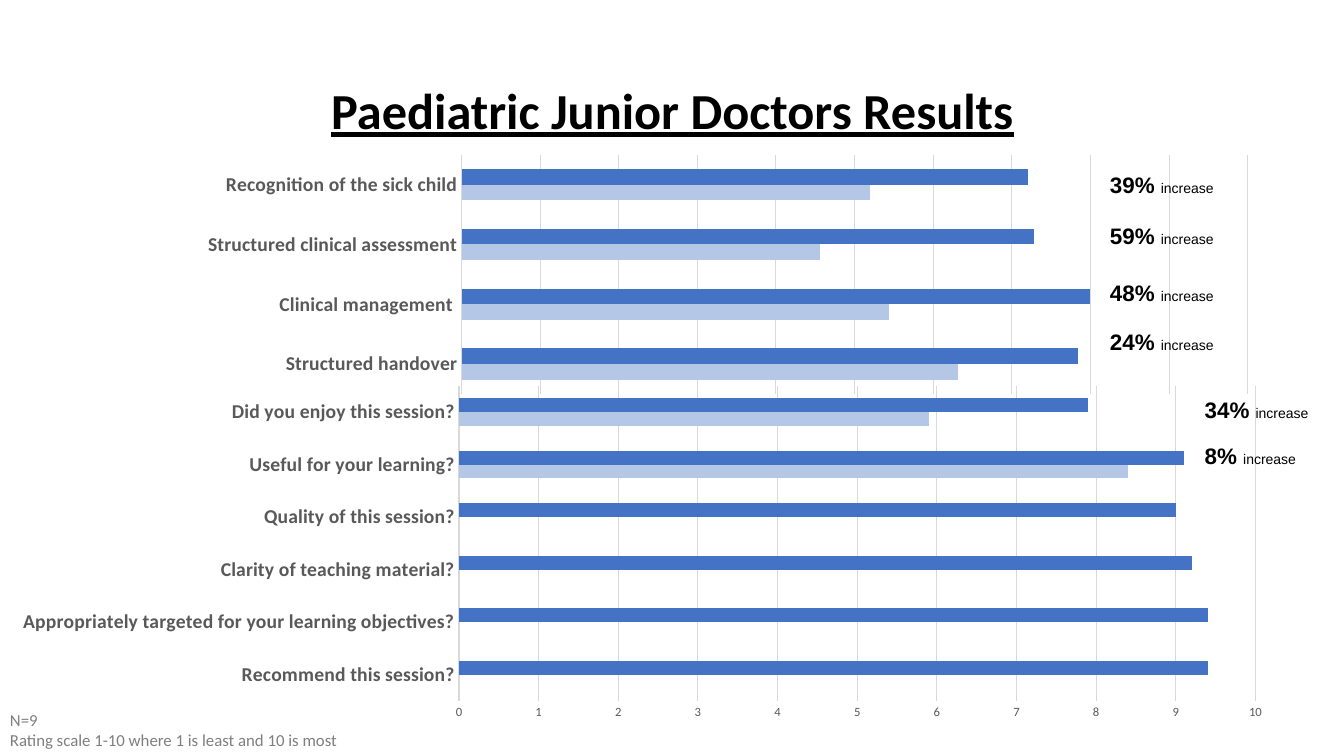
from dataclasses import dataclass

from lxml import etree
from pptx import Presentation
from pptx import util as u
from pptx.chart import data
from pptx.dml import color
from pptx.enum import chart as charts, text

BLACK, DARK_GRAY, GRAY, GRID = "000000", "595959", "7F7F7F", "D9D9D9"
BEFORE, AFTER = "B4C7E7", "4472C4"
CHART_NS = "http://schemas.openxmlformats.org/drawingml/2006/chart"


@dataclass
class Ratings:
    at: tuple[float, float, float, float]
    plot: tuple[float, float, float, float]
    maximum: float
    show_scale: bool
    rows: list[tuple[str, float | None, float]]


@dataclass
class Increase:
    left: float
    top: float
    percent: str


RATINGS = [
    Ratings((1.85, 1.48, 10.74, 2.47), (0.254, 0.023, 0.726, 0.96), 125, False, [
        ("Structured handover", 79, 98),
        ("Clinical management ", 68, 100),
        ("Structured clinical assessment", 57, 91),
        ("Recognition of the sick child", 65, 90),
    ]),
    Ratings((0.13, 3.62, 12.6, 3.6), (0.351, 0.058, 0.627, 0.868), 10, True, [
        ("Recommend this session?", None, 9.4),
        ("Appropriately targeted for your learning objectives?", None, 9.4),
        ("Clarity of teaching material?", None, 9.2),
        ("Quality of this session?", None, 9),
        ("Useful for your learning?", 8.4, 9.1),
        ("Did you enjoy this session?", 5.9, 7.9),
    ]),
]

INCREASES = [
    Increase(10.91, 1.65, "39%"),
    Increase(10.91, 2.15, "59%"),
    Increase(10.91, 2.72, "48%"),
    Increase(10.91, 3.21, "24%"),
    Increase(11.85, 3.88, "34%"),
    Increase(11.85, 4.34, "8%"),
]


def rgb(value: str) -> color.RGBColor:
    return color.RGBColor.from_string(value)


def style_font(font, size: float, hue: str, name: str = "Calibri",
               bold: bool = False, underline: bool = False) -> None:
    font.size = u.Pt(size)
    font.name = name
    font.bold = bold
    font.underline = underline
    font.color.rgb = rgb(hue)


def add_span(para, words: str, **style) -> None:
    span = para.add_run()
    span.text = words
    style_font(span.font, **style)


def add_box(page, left: float, top: float, width: float, height: float):
    """Add an empty wrapping text box and return its text frame."""
    box = page.shapes.add_textbox(*map(u.Inches, (left, top, width, height)))
    box.text_frame.word_wrap = True
    return box.text_frame


def style_line(line, hue: str) -> None:
    line.color.rgb = rgb(hue)
    line.width = u.Pt(0.75)


def set_plot_layout(chart, plot: tuple[float, float, float, float]) -> None:
    """Fix the inner plot area as fractions of the chart."""
    area = chart.plots[0]._element.getparent()
    for old in area.findall(f"{{{CHART_NS}}}layout"):
        area.remove(old)
    layout = etree.Element(f"{{{CHART_NS}}}layout")
    manual = etree.SubElement(layout, f"{{{CHART_NS}}}manualLayout")
    settings = [("layoutTarget", "inner"), ("xMode", "edge"), ("yMode", "edge"),
                *zip("xywh", plot)]
    for tag, value in settings:
        etree.SubElement(manual, f"{{{CHART_NS}}}{tag}").set("val", str(value))
    area.insert(0, layout)


def add_ratings(page, ratings: Ratings) -> None:
    names, before, after = zip(*ratings.rows)
    chart_data = data.CategoryChartData()
    chart_data.categories = names
    chart_data.add_series("Series 1", before)
    chart_data.add_series("Series 2", after)
    chart = page.shapes.add_chart(charts.XL_CHART_TYPE.BAR_CLUSTERED,
                                  *map(u.Inches, ratings.at), chart_data).chart
    chart.has_legend = False
    chart.has_title = False
    style_font(chart.font, 10, BLACK)
    set_plot_layout(chart, ratings.plot)

    bars = chart.plots[0]
    bars.gap_width = 182
    bars.overlap = 0
    bars.vary_by_categories = False
    for series, hue in zip(bars.series, (BEFORE, AFTER)):
        series.format.fill.solid()
        series.format.fill.fore_color.rgb = rgb(hue)
        series.invert_if_negative = False

    topics, scale = chart.category_axis, chart.value_axis
    for axis in (topics, scale):
        axis.major_tick_mark = axis.minor_tick_mark = charts.XL_TICK_MARK.NONE
    style_font(topics.tick_labels.font, 14, DARK_GRAY, bold=True)
    style_line(topics.format.line, GRID)
    style_font(scale.tick_labels.font, 9, DARK_GRAY)
    scale.format.line.fill.background()
    scale.has_major_gridlines = True
    style_line(scale.major_gridlines.format.line, GRID)
    scale.minimum_scale = 0
    scale.maximum_scale = ratings.maximum
    scale.major_unit = ratings.maximum / 10
    scale.visible = ratings.show_scale


def add_title(page, words: str) -> None:
    frame = add_box(page, 0.92, 0.4, 11.5, 1.45)
    frame.vertical_anchor = text.MSO_ANCHOR.MIDDLE
    para = frame.paragraphs[0]
    para.alignment = text.PP_ALIGN.CENTER
    para.line_spacing = 0.9
    add_span(para, words, size=36, hue=BLACK, bold=True, underline=True)


def add_footnote(page, lines: list[str]) -> None:
    frame = add_box(page, 0, 6.99, 6.12, 0.51)
    for index, line in enumerate(lines):
        para = frame.add_paragraph() if index else frame.paragraphs[0]
        add_span(para, line, size=12, hue=GRAY)


def add_increase(page, increase: Increase) -> None:
    para = add_box(page, increase.left, increase.top, 1.68, 0.37).paragraphs[0]
    add_span(para, f"{increase.percent} ", size=16, hue=BLACK, name="Arial", bold=True)
    add_span(para, "increase", size=10, hue=BLACK, name="Arial")


def main() -> None:
    deck = Presentation()
    deck.slide_width, deck.slide_height = u.Inches(13.33), u.Inches(7.5)
    page = deck.slides.add_slide(deck.slide_layouts[6])
    add_title(page, "Paediatric Junior Doctors Results")
    add_footnote(page, ["N=9", "Rating scale 1-10 where 1 is least and 10 is most"])
    for ratings in RATINGS:
        add_ratings(page, ratings)
    for increase in INCREASES:
        add_increase(page, increase)
    deck.save("out.pptx")


if __name__ == "__main__":
    main()
